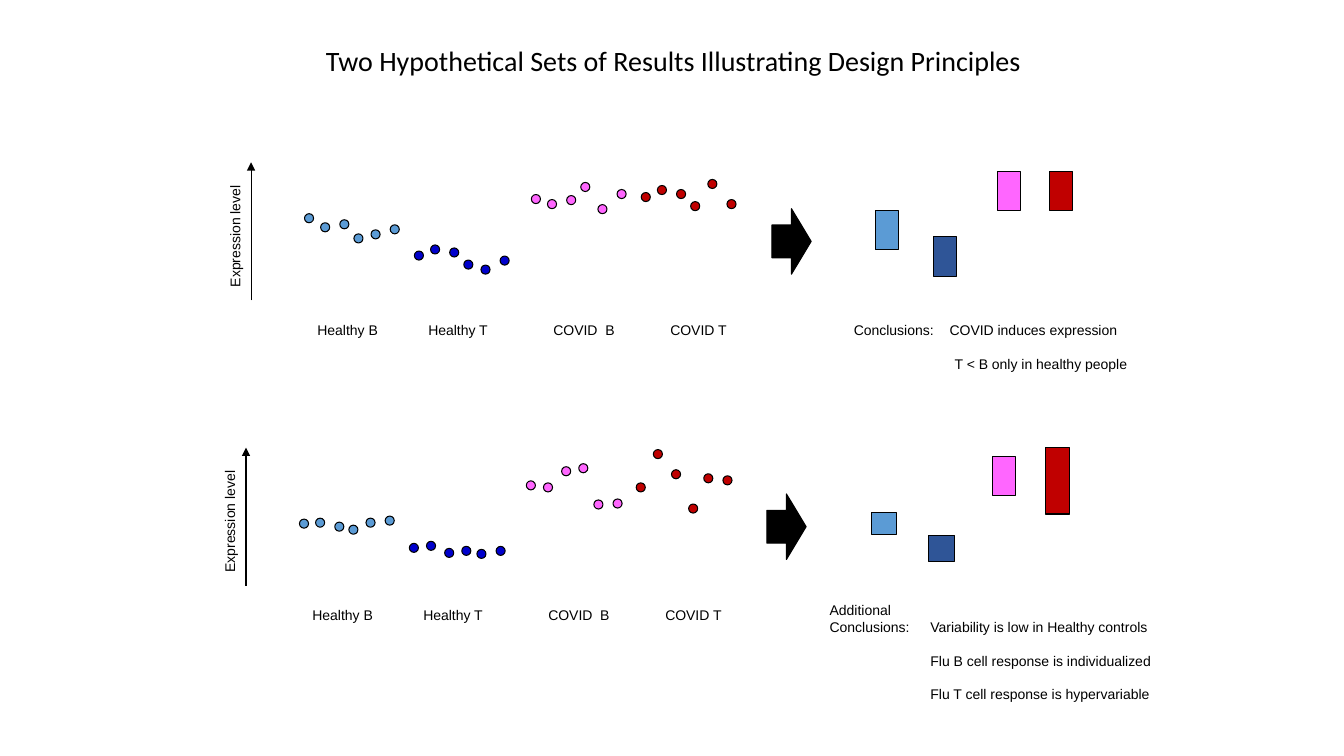
from collections import namedtuple

from lxml.etree import SubElement
from pptx import Presentation
from pptx.dml.color import RGBColor
from pptx.enum.shapes import MSO_CONNECTOR as Connector, MSO_SHAPE as Shape
from pptx.enum.text import PP_ALIGN as Align
from pptx.oxml.ns import qn
from pptx.util import Inches, Pt

BLACK = RGBColor(0x00, 0x00, 0x00)
SKY = RGBColor(0x5B, 0x9B, 0xD5)
BLUE = RGBColor(0x00, 0x00, 0xCC)
NAVY = RGBColor(0x2F, 0x55, 0x97)
PINK = RGBColor(0xFF, 0x66, 0xFF)
RED = RGBColor(0xC0, 0x00, 0x00)

Box = namedtuple("Box", "left top width height")
Line = namedtuple("Line", "text stops before")
Panel = namedtuple("Panel", "groups bars findings_area findings")

COLUMNS, ROWS = 90, 26
DOT_COLORS = (SKY, BLUE, PINK, RED)
BAR_COLORS = (SKY, NAVY, PINK, RED)
GROUP_COLUMNS = (5.3, 16.2, 27.8, 38.7)
GROUP_LABELS = "Healthy B\tHealthy T\tCOVID  B\tCOVID T"
LABEL_STOPS = (1.1, 2.34, 3.5)
EVEN = (0, 1.6, 3.5, 4.9, 6.6, 8.5)
WIDE = (0, 1.7, 3.5, 5.2, 6.7, 8.6)

FIRST = Panel(
    groups=(
        (EVEN, (5.1, 6, 5.7, 7.1, 6.7, 6.2)),
        (EVEN, (8.8, 8.2, 8.5, 9.7, 10.2, 9.3)),
        (EVEN, (3.2, 3.7, 3.3, 2, 4.2, 2.7)),
        (EVEN, (3, 2.3, 2.7, 3.9, 1.7, 3.7)),
    ),
    bars=((61.9, 4.8, 2.3, 3.9), (67.7, 7.4, 2.3, 3.9),
          (74, 0.9, 2.3, 3.9), (79.2, 0.9, 2.3, 3.9)),
    findings_area=(58.8, 15.3, 29.4, 6.1),
    findings=(
        Line("Conclusions:\tCOVID induces expression", (0.95,), 0),
        Line("\tT < B only in healthy people", (1,), 12),
    ),
)
SECOND = Panel(
    groups=(
        (EVEN, (7.1, 7, 7.4, 7.7, 7, 6.8)),
        (WIDE, (9.5, 9.3, 10, 9.8, 10.1, 9.8)),
        (WIDE, (3.3, 3.5, 1.9, 1.6, 5.2, 5.1)),
        (WIDE, (3.5, 0.2, 2.2, 5.6, 2.6, 2.8)),
    ),
    bars=((62, 6.4, 2.5, 2.2), (67.7, 8.7, 2.6, 2.6),
          (74, 0.9, 2.3, 3.9), (79.3, 0, 2.4, 6.6)),
    findings_area=(56.9, 14.8, 34.2, 11.1),
    findings=(
        Line("Additional", (), 0),
        Line("Conclusions:\tVariability is low in Healthy controls", (1,), 0),
        Line("\tFlu B cell response is individualized", (1,), 12),
        Line("\tFlu T cell response is hypervariable", (1,), 12),
    ),
)


def cells(box, column, row, width, height):
    across, down = box.width / COLUMNS, box.height / ROWS
    return Box(int(box.left + column * across), int(box.top + row * down),
               int(width * across), int(height * down))


def add_filled(shapes, kind, area, color):
    shape = shapes.add_shape(kind, *area)
    shape.shadow.inherit = False
    shape.fill.solid()
    shape.fill.fore_color.rgb = color
    shape.line.color.rgb = BLACK
    shape.line.width = Pt(0.75)


def add_text(shapes, area, lines, size=10, font="Arial", align=Align.LEFT):
    text_box = shapes.add_textbox(*area)
    frame = text_box.text_frame
    frame.word_wrap = True
    frame.margin_right = 0
    if align == Align.CENTER:
        frame.margin_left = 0
    frame.text = "\n".join(line.text for line in lines)
    for para, line in zip(frame.paragraphs, lines):
        para.alignment = align
        para.space_before = Pt(line.before)
        if line.stops:
            stop_list = SubElement(para._p.get_or_add_pPr(), qn("a:tabLst"))
            for stop in line.stops:
                SubElement(stop_list, qn("a:tab"), pos=str(Inches(stop)), algn="l")
        for run in para.runs:
            run.font.size = Pt(size)
            run.font.name = font
            run.font.color.rgb = BLACK
    return text_box


def add_axis(shapes, area):
    axis = shapes.add_connector(Connector.STRAIGHT, area.left, area.top + area.height,
                                area.left, area.top)
    axis.line.color.rgb = BLACK
    axis.line.width = Pt(0.75)
    SubElement(axis.line._get_or_add_ln(), qn("a:tailEnd"), type="triangle")
    SubElement(axis._element.spPr, qn("a:effectLst"))


def add_panel(page, box, panel):
    shapes = page.shapes.add_group_shape().shapes
    for bar, color in zip(panel.bars, BAR_COLORS):
        add_filled(shapes, Shape.RECTANGLE, cells(box, *bar), color)
    for start, (offsets, rows), color in zip(GROUP_COLUMNS, panel.groups, DOT_COLORS):
        for offset, row in zip(offsets, rows):
            add_filled(shapes, Shape.OVAL, cells(box, start + offset, row, 0.9, 0.9), color)
    add_text(shapes, cells(box, 5.6, 15.3, 43.6, 2.7), [Line(GROUP_LABELS, LABEL_STOPS, 0)])
    add_axis(shapes, cells(box, 0, 0, 0, 13.7))
    axis_title = add_text(shapes, cells(box, -7.7, 6, 12.2, 2.7),
                          [Line("Expression level", (), 0)], align=Align.CENTER)
    axis_title.rotation = 270
    add_filled(shapes, Shape.RIGHT_ARROW, cells(box, 51.65, 4.6, 3.9, 6.5), BLACK)
    add_text(shapes, cells(box, *panel.findings_area), panel.findings)


def add_title(page, box):
    title = "Two Hypothetical Sets of Results Illustrating Design Principles"
    add_text(page.shapes, box, [Line(title, (), 0)], 20, "Calibri", Align.CENTER)


def main():
    deck = Presentation()
    deck.slide_width, deck.slide_height = Inches(13.33), Inches(7.5)
    page = deck.slides.add_slide(deck.slide_layouts[6])
    add_panel(page, Box(Inches(2.49), Inches(1.61), Inches(9), Inches(2.6)), FIRST)
    add_panel(page, Box(Inches(2.44), Inches(4.44), Inches(9), Inches(2.6)), SECOND)
    add_title(page, Box(Inches(2.43), Inches(0.38), Inches(8.5), Inches(0.55)))
    deck.save("out.pptx")


if __name__ == "__main__":
    main()
